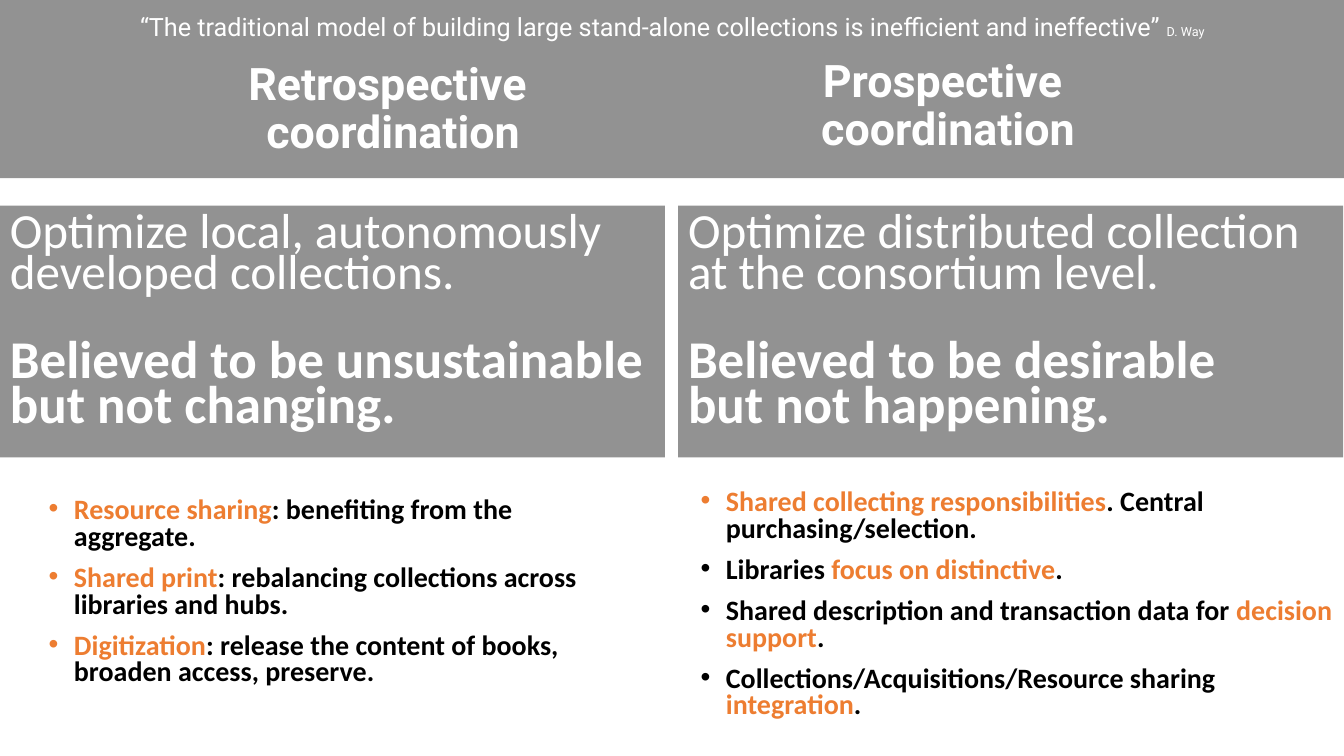
import pptx
import pptx.util
import pptx.dml.color
import pptx.enum.shapes
import pptx.enum.text
import lxml.etree
import pptx.oxml.ns

Cm, Pt = pptx.util.Cm, pptx.util.Pt
Align = pptx.enum.text.PP_ALIGN
Anchor = pptx.enum.text.MSO_ANCHOR
hues = {"gray": "808080", "white": "FFFFFF", "black": "000000", "orange": "ED7D31"}


def style(font, hue, size=None, name=None, bold=None):
    font.color.rgb = pptx.dml.color.RGBColor.from_string(hues[hue])
    if size:
        font.size, font.name, font.bold = Pt(size), name, bold


def panel(left, top, width, height):
    box = slide.shapes.add_shape(
        pptx.enum.shapes.MSO_SHAPE.RECTANGLE, Cm(left), Cm(top), Cm(width), Cm(height))
    box.shadow.inherit = False
    box.line.fill.background()
    box.fill.solid()
    box.fill.fore_color.rgb = pptx.dml.color.RGBColor.from_string(hues["gray"])
    tint = box.fill._xPr.find(".//" + pptx.oxml.ns.qn("a:srgbClr"))
    lxml.etree.SubElement(tint, pptx.oxml.ns.qn("a:alpha"), val="85000")
    return box


deck = pptx.Presentation()
deck.slide_width, deck.slide_height = Cm(33.87), Cm(19.05)
slide = deck.slides.add_slide(deck.slide_layouts[4])
title = slide.shapes.title.element
title.getparent().remove(title)

band = panel(0, -0.03, 33.87, 4.52)
slide.shapes._spTree.insert(2, band.element)

heads = [
    (1, "Retrospective \vcoordination", (3.89, 1.83, 12.04, 2.29)),
    (3, "Prospective \vcoordination", (18.14, 0.28, 11.51, 3.76)),
]
for key, text, area in heads:
    head = slide.placeholders[key]
    head.left, head.top, head.width, head.height = map(Cm, area)
    frame = head.text_frame
    frame.text = text
    frame.auto_size = pptx.enum.text.MSO_AUTO_SIZE.NONE
    frame.vertical_anchor = Anchor.BOTTOM
    para = frame.paragraphs[0]
    para.alignment = Align.CENTER
    para.line_spacing = 0.9
    para.space_before = Pt(0)
    style(para.font, "white", 32, "Roboto", True)

claims = [
    (0, "Optimize local, autonomously developed collections.",
     "Believed to be unsustainable but not changing."),
    (17.09, "Optimize distributed collection at the consortium level.",
     "Believed to be desirable\vbut not happening."),
]
for left, aim, view in claims:
    frame = panel(left, 5.18, 16.76, 6.35).text_frame
    frame.word_wrap = True
    frame.vertical_anchor = Anchor.TOP
    frame.margin_left = frame.margin_right = frame.margin_top = Cm(0.25)
    frame.margin_bottom = 0
    rows = [(aim, 35.1, False, 0), (view, 37.9, True, 32)]
    for i, (text, size, bold, gap) in enumerate(rows):
        para = frame.add_paragraph() if i else frame.paragraphs[0]
        para.text = text
        para.alignment = Align.LEFT
        para.line_spacing = 0.7
        para.space_before = Pt(gap)
        style(para.font, "white", size, "Calibri", bold)

quote = slide.shapes.add_textbox(Cm(3.28), Cm(0.15), Cm(29.08), Cm(1.02)).text_frame
quote.word_wrap = True
para = quote.paragraphs[0]
style(para.font, "white", 18, "Roboto", False)
para.add_run().text = ("“The traditional model of building large stand-alone "
                       "collections is inefficient and ineffective” ")
source = para.add_run()
source.text = "D. Way"
source.font.size = Pt(9)

lists = [
    (2, (0.97, 12.42, 14.68, 6.17), [
        ("", "Resource sharing", ": benefiting from the aggregate."),
        ("", "Shared print", ": rebalancing collections across libraries and hubs."),
        ("", "Digitization", ": release the content of books, broaden access, preserve."),
    ]),
    (4, (17.4, 12.22, 16.48, 6.35), [
        ("", "Shared collecting responsibilities", ". Central purchasing/selection."),
        ("Libraries ", "focus on distinctive", "."),
        ("Shared description and transaction data for ", "decision support", "."),
        ("Collections/Acquisitions/Resource sharing ", "integration", "."),
    ]),
]
for key, area, items in lists:
    body = slide.placeholders[key]
    body.left, body.top, body.width, body.height = map(Cm, area)
    frame = body.text_frame
    frame.auto_size = pptx.enum.text.MSO_AUTO_SIZE.NONE
    for i, parts in enumerate(items):
        para = frame.add_paragraph() if i else frame.paragraphs[0]
        props = para._p.get_or_add_pPr()
        props.set("marL", str(Cm(0.64)))
        props.set("indent", str(Cm(-0.64)))
        para.line_spacing = 0.8
        para.space_before = Pt(10 if i else 0)
        style(para.font, "black", 20, "Calibri", True)
        for text, hue in zip(parts, ("black", "orange", "black")):
            if text:
                run = para.add_run()
                run.text = text
                style(run.font, hue)

deck.save("out.pptx")
